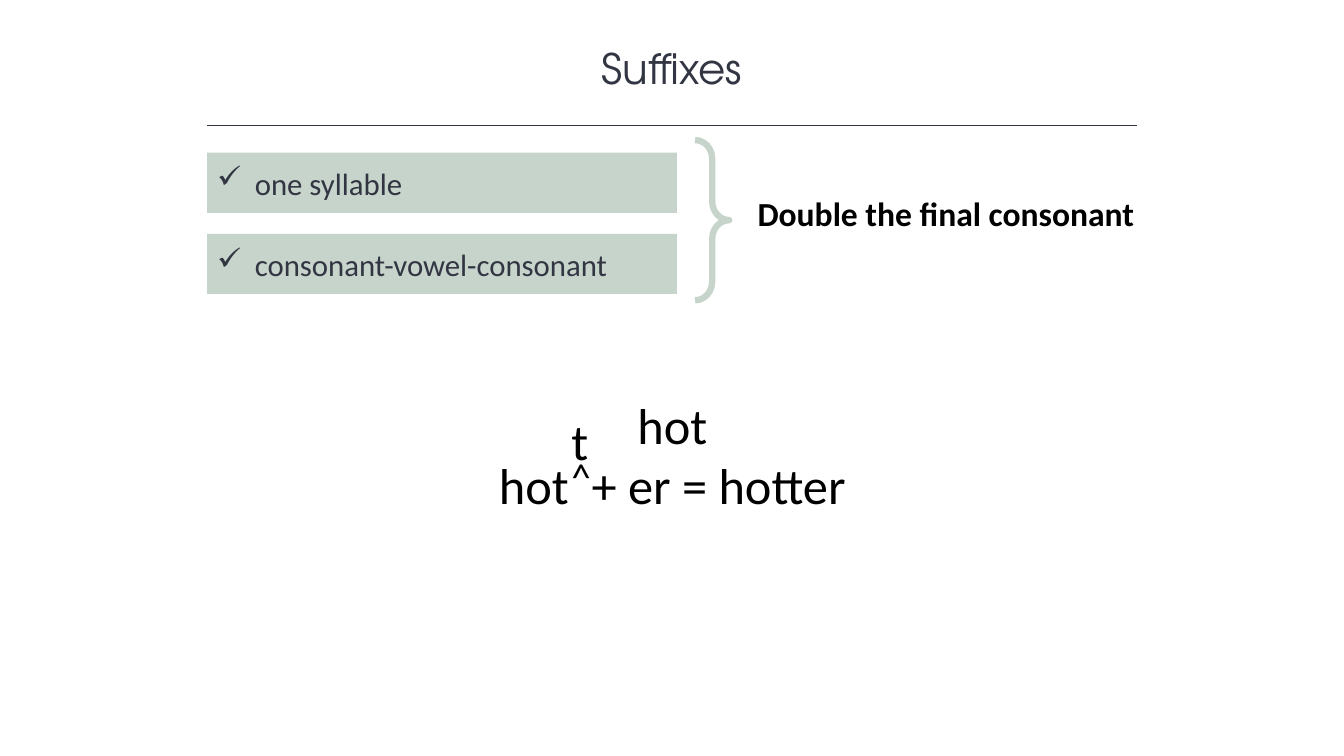
from pptx import Presentation
from pptx.dml.color import RGBColor
from pptx.enum.shapes import MSO_CONNECTOR, MSO_SHAPE as SHAPE
from pptx.enum.text import MSO_ANCHOR as ANCHOR, PP_ALIGN as ALIGN
from pptx.oxml.ns import qn
from pptx.util import Pt
from lxml import etree

INK, SAGE, BLACK, WHITE = "323542", "C7D4CB", "000000", "FFFFFF"


def color(hex_code):
    return RGBColor.from_string(hex_code)


def write(box, text, size, font="Calibri", ink=BLACK, bold=False,
          align=ALIGN.LEFT, anchor=ANCHOR.TOP, wrap=True, bullet=None):
    frame = box.text_frame
    frame.word_wrap = wrap
    frame.vertical_anchor = anchor
    for number, line in enumerate(text.split("\n")):
        para = frame.add_paragraph() if number else frame.paragraphs[0]
        para.alignment = align
        span = para.add_run()
        span.text = line
        span.font.name = font
        span.font.size = Pt(size)
        span.font.bold = bold
        span.font.color.rgb = color(ink)
        if bullet:
            props = para._p.get_or_add_pPr()
            props.set("marL", str(Pt(27)))
            props.set("indent", str(-Pt(27)))
            etree.SubElement(props, qn("a:buChar")).set("char", bullet)


deck = Presentation()
deck.slide_width, deck.slide_height = Pt(960), Pt(540)
page = deck.slides.add_slide(deck.slide_layouts[6])
shapes = page.shapes

# Title and rule
rule = shapes.add_connector(MSO_CONNECTOR.STRAIGHT, Pt(148), Pt(89.5), Pt(812), Pt(89.5))
rule.line.color.rgb = color(INK)
rule.line.width = Pt(1)
etree.SubElement(rule._element.spPr, qn("a:effectLst"))
title = shapes.add_textbox(Pt(120), Pt(26.5), Pt(720), Pt(44))
write(title, "Suffixes", 30, font="TeX Gyre Adventor", ink=INK, align=ALIGN.CENTER)

# Conditions
for row, condition in enumerate(["one syllable", "consonant-vowel-consonant"]):
    bar = shapes.add_shape(SHAPE.RECTANGLE, Pt(148), Pt(109 + 58 * row), Pt(335.5), Pt(43))
    bar.shadow.inherit = False
    bar.fill.solid()
    bar.fill.fore_color.rgb = color(SAGE)
    bar.line.fill.background()
    write(bar, condition, 22, ink=INK, anchor=ANCHOR.MIDDLE, bullet="✓")

# Brace and the rule it leads to
brace = shapes.add_shape(SHAPE.RIGHT_BRACE, Pt(496.5), Pt(100), Pt(24.5), Pt(114.5))
brace.shadow.inherit = False
brace.adjustments[0] = 0.54
brace.fill.background()
brace.line.color.rgb = color(SAGE)
brace.line.width = Pt(4.5)
outcome = shapes.add_textbox(Pt(534), Pt(134), Pt(286.5), Pt(36))
write(outcome, "Double the final consonant", 24, bold=True, wrap=False)

# Worked example with the inserted letter
example = shapes.add_shape(SHAPE.RECTANGLE, Pt(227.5), Pt(278), Pt(505.5), Pt(94))
example.shadow.inherit = False
example.fill.solid()
example.fill.fore_color.rgb = color(WHITE)
example.line.fill.background()
write(example, "hot\nhot  + er = hotter", 36, align=ALIGN.CENTER)
letter = shapes.add_textbox(Pt(401), Pt(289.5), Pt(26.5), Pt(51))
write(letter, "t", 36, wrap=False)
caret = shapes.add_textbox(Pt(401), Pt(319.5), Pt(26.5), Pt(41))
write(caret, "^", 28)

deck.save("out.pptx")
